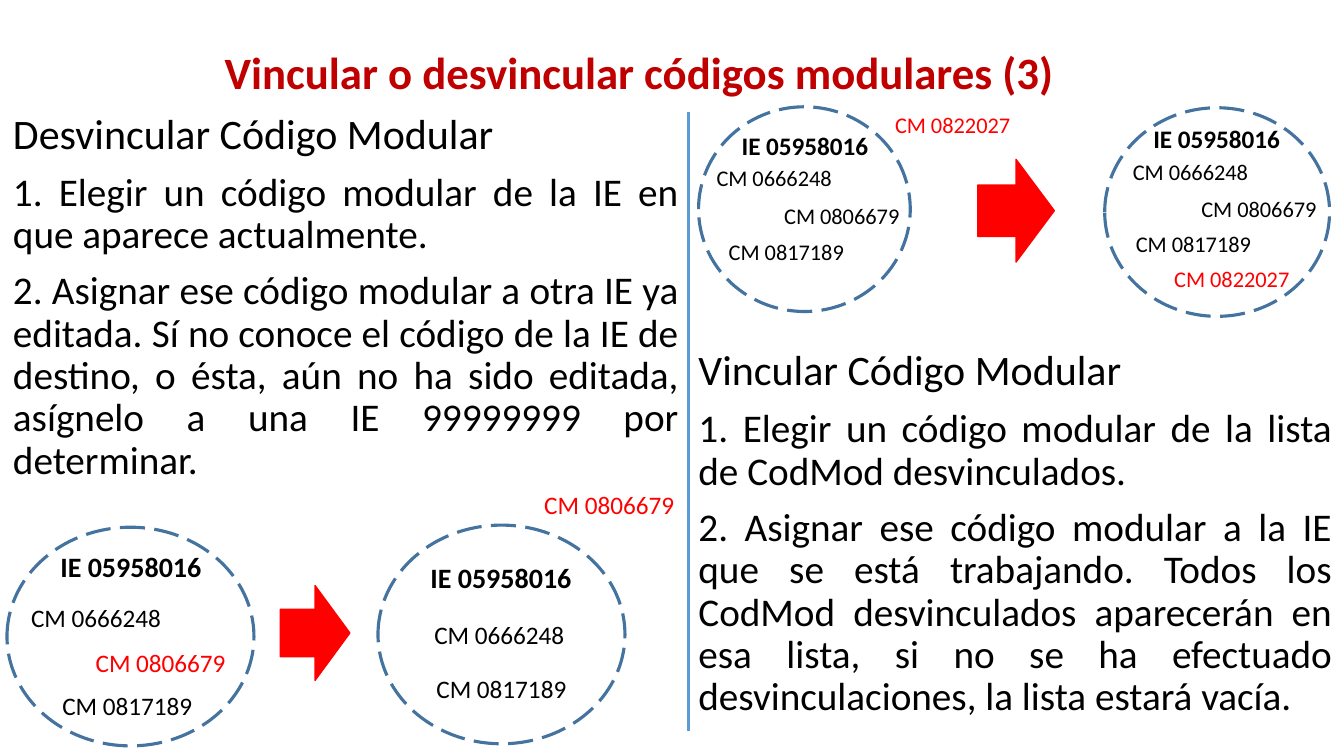
from pptx import Presentation
from pptx.dml.color import RGBColor
from pptx.enum.dml import MSO_LINE
from pptx.enum.shapes import MSO_CONNECTOR, MSO_SHAPE
from pptx.enum.text import MSO_ANCHOR, PP_ALIGN
from pptx.oxml.ns import qn
from pptx.util import Pt
from lxml import etree

LEFT, CENTER, JUSTIFY = PP_ALIGN.LEFT, PP_ALIGN.CENTER, PP_ALIGN.JUSTIFY
TOP, MIDDLE = MSO_ANCHOR.TOP, MSO_ANCHOR.MIDDLE
ELLIPSE, ARROW = MSO_SHAPE.OVAL, MSO_SHAPE.RIGHT_ARROW
STRAIGHT, LONG_DASH = MSO_CONNECTOR.STRAIGHT, MSO_LINE.LONG_DASH
BLACK, RED, DARK_RED = "000000", "FF0000", "C00000"
BLUE, STEEL = "5B9BD5", "43739E"


def color(value):
    return RGBColor.from_string(value)


class Builder:
    """Holds the style and the current slide and draws each kind of element."""

    def __init__(self, slide, font="Calibri"):
        self.s = slide
        self.font = font

    def text(self, box, lines, tone=BLACK, bold=False, align=LEFT,
             anchor=TOP, wrap=False, spacing=1.0):
        sp = self.s.shapes.add_textbox(*map(Pt, box))
        tf = sp.text_frame
        tf.word_wrap = wrap
        tf.vertical_anchor = anchor
        for i, (line, size) in enumerate(lines):
            p = tf.add_paragraph() if i else tf.paragraphs[0]
            p.alignment = align
            p.line_spacing = spacing
            if i:
                p.space_before = Pt(10)
            r = p.add_run()
            r.text = line
            r.font.name = self.font
            r.font.size = Pt(size)
            r.font.bold = bold
            r.font.color.rgb = color(tone)

    def column(self, box, heading, steps):
        lines = [(heading, 30)] + [(step, 28) for step in steps]
        self.text(box, lines, align=JUSTIFY, wrap=True, spacing=0.9)

    def code(self, x, y, number, size, tone=BLACK):
        self.text((x, y, 6.6 * size, size + 11), [(f"CM {number}", size)], tone)

    def school(self, circle, heading, size, codes):
        sp = self.s.shapes.add_shape(ELLIPSE, *map(Pt, circle))
        sp.shadow.inherit = False
        sp.fill.background()
        sp.line.color.rgb = color(STEEL)
        sp.line.width = Pt(2.25)
        sp.line.dash_style = LONG_DASH
        center, top = heading
        width = 6.4 * size
        self.text((center - width / 2, top, width, size + 11),
                  [("IE 05958016", size)], bold=True, align=CENTER)
        for x, y, number, tone in codes:
            self.code(x, y, number, size - 2, tone)

    def arrow(self, box):
        sp = self.s.shapes.add_shape(ARROW, *map(Pt, box))
        sp.shadow.inherit = False
        sp.fill.solid()
        sp.fill.fore_color.rgb = color(RED)
        sp.line.color.rgb = color(RED)
        sp.line.width = Pt(1)

    def divider(self, x, top, bottom):
        cx = self.s.shapes.add_connector(STRAIGHT, *map(Pt, (x, top, x, bottom)))
        cx.line.color.rgb = color(BLUE)
        cx.line.width = Pt(2.25)
        etree.SubElement(cx._element.spPr, qn("a:effectLst"))


def main():
    prs = Presentation()
    prs.slide_width, prs.slide_height = Pt(960), Pt(540)
    b = Builder(prs.slides.add_slide(prs.slide_layouts[6]))

    b.text((76.3, 32.4, 761, 42.5),
           [("Vincular o desvincular códigos modulares (3)", 32)],
           DARK_RED, True, CENTER, MIDDLE, True, 0.9)
    b.column((2.2, 77, 489.6, 293.8), "Desvincular Código Modular", [
        "1. Elegir un código modular de la IE en que aparece actualmente.",
        "2. Asignar ese código modular a otra IE ya editada. Sí no conoce el "
        "código de la IE de destino, o ésta, aún no ha sido editada, asígnelo "
        "a una IE 99999999 por determinar.",
    ])
    b.column((491.8, 246.2, 466.6, 290), "Vincular Código Modular", [
        "1. Elegir un código modular de la lista de CodMod desvinculados.",
        "2. Asignar ese código modular a la IE que se está trabajando. Todos "
        "los CodMod desvinculados aparecerán en esa lista, si no se ha "
        "efectuado desvinculaciones, la lista estará vacía.",
    ])
    b.divider(491.8, 80, 522)

    b.school((5, 376.6, 176.4, 156.2), (93.6, 388.8), 20, [
        (15.1, 427, "0666248", BLACK),
        (37.4, 489.6, "0817189", BLACK),
        (61.2, 458.6, "0806679", RED),
    ])
    b.school((270, 375.1, 176.4, 156.2), (357.9, 396.7), 20, [
        (303.1, 438.5, "0666248", BLACK),
        (304.6, 477.4, "0817189", BLACK),
    ])
    b.code(381.6, 345.6, "0806679", 18, RED)
    b.arrow((200.2, 418.3, 49.7, 67.7))

    b.school((499, 76.3, 151.2, 146.2), (575, 89.3), 18, [
        (504.7, 113.8, "0666248", BLACK),
        (513.4, 166.3, "0817189", BLACK),
        (553, 141.1, "0806679", BLACK),
    ])
    b.school((789.1, 77, 160.6, 149), (869.1, 84.2), 18, [
        (802.1, 109.4, "0666248", BLACK),
        (804.2, 160.6, "0817189", BLACK),
        (851, 136.1, "0806679", BLACK),
        (831.6, 185.8, "0822027", RED),
    ])
    b.code(632.2, 75.6, "0822027", 16, RED)
    b.arrow((698.4, 113.8, 54.7, 73.4))

    prs.save("out.pptx")


if __name__ == "__main__":
    main()
